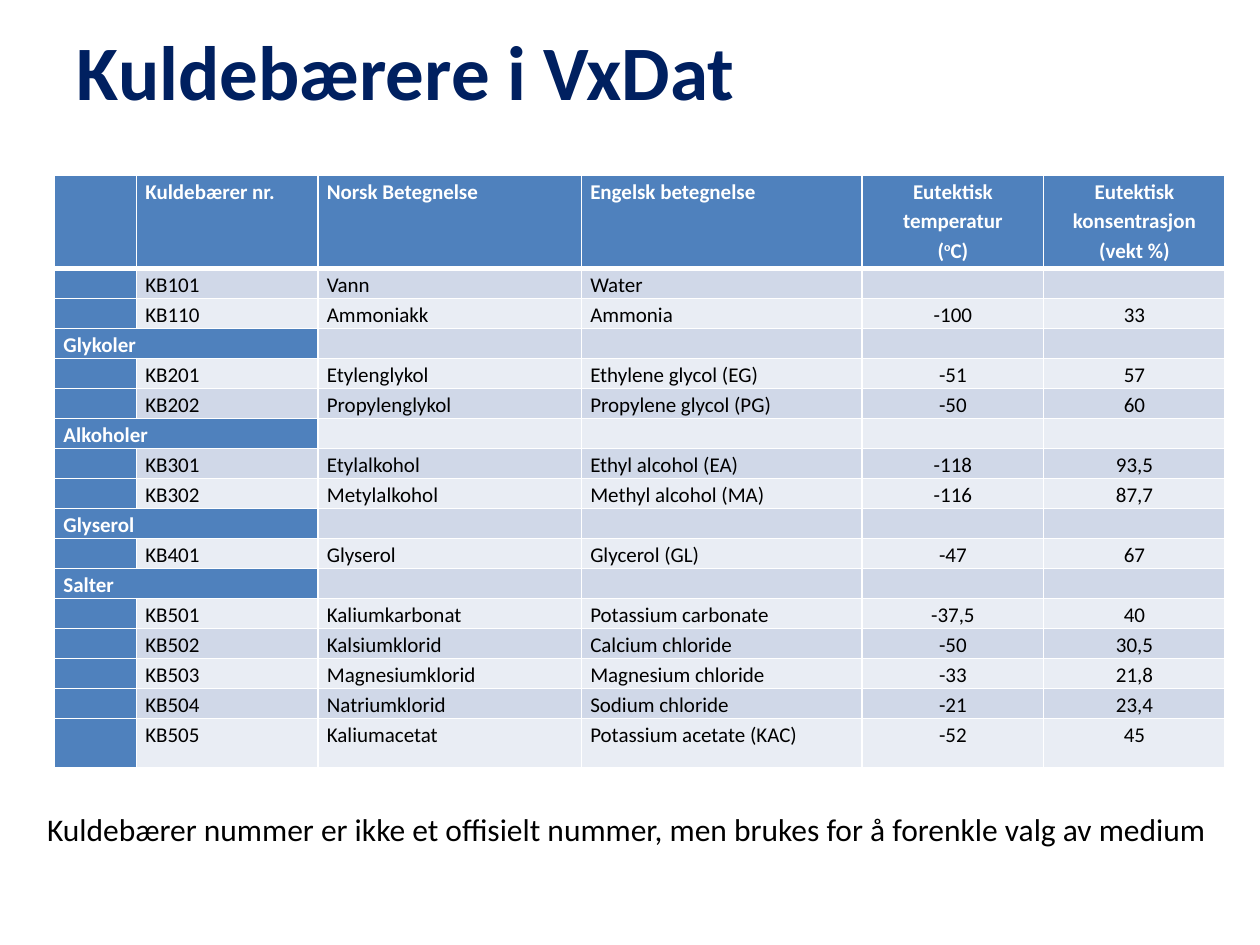
from lxml import etree
from pptx import Presentation
from pptx import util as u
from pptx.dml.color import RGBColor
from pptx.enum import text
from pptx.oxml.ns import qn

# Content
TITLE = "Kuldebærere i VxDat"
NOTE = "Kuldebærer nummer er ikke et offisielt nummer, men brukes for å forenkle valg av medium"
SUPER = "o"  # the degree sign, set as a raised letter
HEADER = [
    [],
    ["Kuldebærer nr."],
    ["Norsk Betegnelse"],
    ["Engelsk betegnelse"],
    ["Eutektisk temperatur", ("(", SUPER, "C)")],
    ["Eutektisk konsentrasjon (vekt %)"],
]
GROUPS = [
    ("", [("KB101", "Vann", "Water", "", ""),
          ("KB110", "Ammoniakk", "Ammonia", "-100", "33")]),
    ("Glykoler", [("KB201", "Etylenglykol", "Ethylene glycol (EG)", "-51", "57"),
                  ("KB202", "Propylenglykol", "Propylene glycol (PG)", "-50", "60")]),
    ("Alkoholer", [("KB301", "Etylalkohol", "Ethyl alcohol (EA)", "-118", "93,5"),
                   ("KB302", "Metylalkohol", "Methyl alcohol (MA)", "-116", "87,7")]),
    ("Glyserol", [("KB401", "Glyserol", "Glycerol (GL)", "-47", "67")]),
    ("Salter", [("KB501", "Kaliumkarbonat", "Potassium carbonate", "-37,5", "40"),
                ("KB502", "Kalsiumklorid", "Calcium chloride", "-50", "30,5"),
                ("KB503", "Magnesiumklorid", "Magnesium chloride", "-33", "21,8"),
                ("KB504", "Natriumklorid", "Sodium chloride", "-21", "23,4"),
                ("KB505", "Kaliumacetat", "Potassium acetate (KAC)", "-52", "45")]),
]
COLORS = {"navy": "002060", "blue": "4F81BD", "dark_band": "D0D8E8",
          "light_band": "E9EDF4", "white": "FFFFFF", "black": "000000"}
COL_WIDTHS = [1.65, 3.66, 5.31, 5.66, 3.66, 3.66]
HEADER_H, ROW_H, LAST_H = 1.87, 0.605, 1.0


def write(tf, paras, size=12, color="black", bold=False, align=None, spacing=None):
    """Fill a text frame; a paragraph is a string or a tuple of runs."""
    for i, para in enumerate(paras or [""]):
        p = tf.add_paragraph() if i else tf.paragraphs[0]
        p.alignment, p.line_spacing = align, spacing
        if not para:  # keeps an empty cell as low as the others
            etree.SubElement(p._p, qn("a:endParaRPr"), sz=str(size * 100))
            continue
        for part in (para,) if isinstance(para, str) else para:
            r = p.add_run()
            r.text = part
            r.font.name, r.font.size, r.font.bold = "Calibri", u.Pt(size), bold
            r.font.color.rgb = RGBColor.from_string(COLORS[color])
            if part == SUPER:
                r._r.get_or_add_rPr().set("baseline", "30000")


def set_borders(cell, **widths):
    """Draw white borders, 1 pt wide unless given for a side."""
    tc_pr = cell._tc.get_or_add_tcPr()
    for side in "LRTB":
        ln = etree.SubElement(tc_pr, qn("a:ln" + side), w=str(u.Pt(widths.get(side, 1))))
        fill = etree.SubElement(ln, qn("a:solidFill"))
        etree.SubElement(fill, qn("a:srgbClr"), val=COLORS["white"])


def add_text(slide, left, top, width, height):
    sp = slide.shapes.add_textbox(u.Cm(left), u.Cm(top), u.Cm(width), u.Cm(height))
    return sp.text_frame


prs = Presentation()
prs.slide_width, prs.slide_height = u.Cm(25.4), u.Cm(19.05)
slide = prs.slides.add_slide(prs.slide_layouts[6])

# Title
tf = add_text(slide, 1.3, 0.33, 22.86, 2.16)
tf.word_wrap = True
tf.vertical_anchor = text.MSO_ANCHOR.MIDDLE
write(tf, [TITLE], size=44, color="navy", bold=True)

# Table rows: the header, then each group name followed by its members
rows = [HEADER]
for name, members in GROUPS:
    if name:
        rows.append([[name]] + [[]] * 5)
    rows += [[[]] + [[value] for value in member] for member in members]

heights = [HEADER_H] + [ROW_H] * (len(rows) - 2) + [LAST_H]
table = slide.shapes.add_table(len(rows), len(COL_WIDTHS), u.Cm(1.1), u.Cm(3.54),
                               u.Cm(sum(COL_WIDTHS)), u.Cm(sum(heights))).table
for column, width in zip(table.columns, COL_WIDTHS):
    column.width = u.Cm(width)
for row, height in zip(table.rows, heights):
    row.height = u.Cm(height)

# Table cells
for i, row in enumerate(rows):
    for j, paras in enumerate(row):
        cell = table.cell(i, j)
        is_head = i == 0 or j == 0
        band = "dark_band" if i % 2 else "light_band"
        set_borders(cell, B=3 if i == 0 else 1, T=3 if i == 1 else 1)
        cell.fill.solid()
        cell.fill.fore_color.rgb = RGBColor.from_string(COLORS["blue" if is_head else band])
        cell.margin_left = cell.margin_right = u.Cm(0.18)
        cell.margin_top = cell.margin_bottom = 0
        write(cell.text_frame, paras, color="white" if is_head else "black", bold=is_head,
              align=text.PP_ALIGN.CENTER if j > 3 else None, spacing=1.15)
    if i and row[0]:
        table.cell(i, 0).merge(table.cell(i, 1))

# Note under the table
tf = add_text(slide, 0.7, 16.2, 24.18, 1.03)
tf.word_wrap = False
tf.auto_size = text.MSO_AUTO_SIZE.SHAPE_TO_FIT_TEXT
write(tf, [NOTE], size=18)

prs.save("out.pptx")
